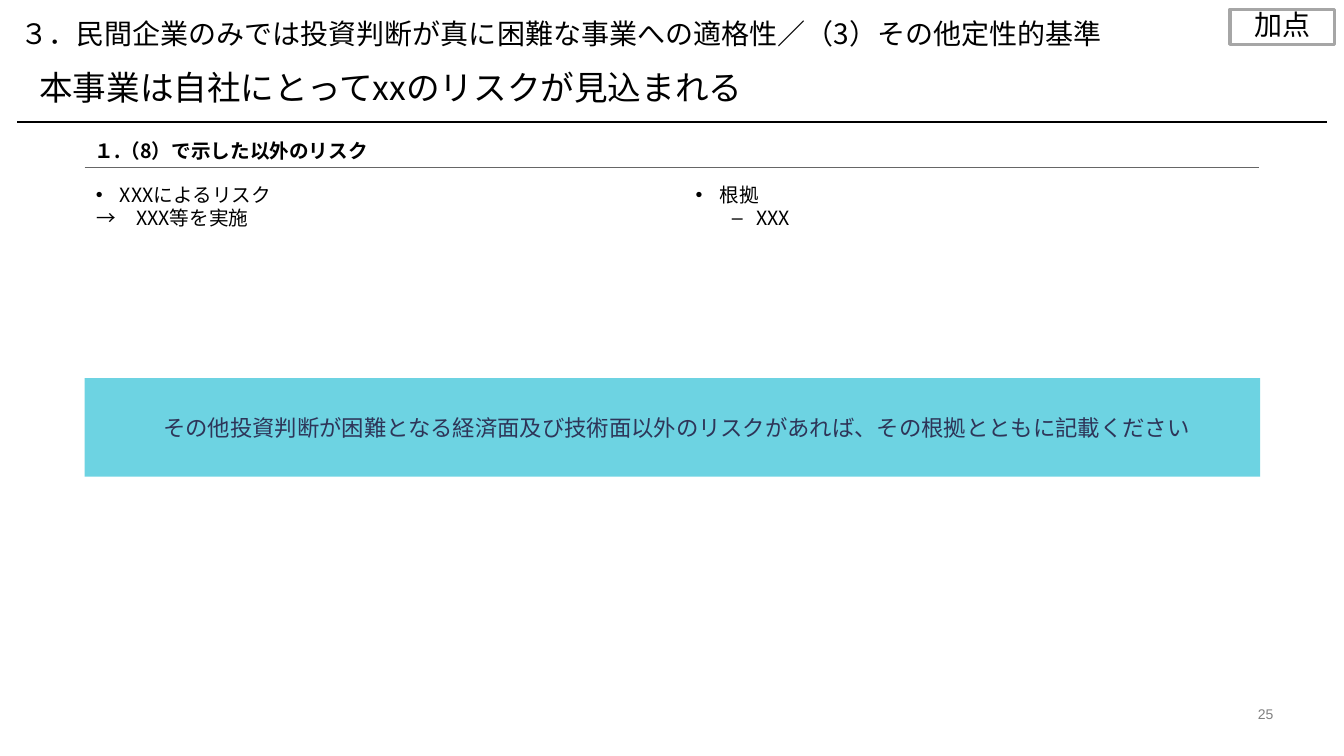
from lxml.etree import SubElement
from pptx import Presentation
from pptx.dml.color import RGBColor
from pptx.enum.shapes import MSO_CONNECTOR, MSO_SHAPE
from pptx.enum.text import MSO_ANCHOR, PP_ALIGN
from pptx.oxml.ns import qn
from pptx.util import Pt

PX = 9144
JAPANESE = "Noto Sans CJK JP"
COLORS = {
    "black": "000000",
    "white": "FFFFFF",
    "page_number": "808080",
    "tag_border": "A6A6A6",
    "heading_rule": "666666",
    "banner": "30C1D7",
    "banner_text": "2E3558",
}


def rgb(name):
    return RGBColor.from_string(COLORS[name])


def write(shape, lines, size, color="black", font=JAPANESE, align=PP_ALIGN.LEFT,
          anchor=MSO_ANCHOR.TOP, spacing=None, bold=False, inset=0):
    frame = shape.text_frame
    frame.word_wrap = True
    frame.vertical_anchor = anchor
    frame.margin_left = frame.margin_right = inset * PX
    frame.margin_top = frame.margin_bottom = inset // 2 * PX
    frame.text = "\n".join(lines)
    for para in frame.paragraphs:
        para.alignment = align
        if spacing:
            para.line_spacing = spacing
        for span in para.runs:
            span.font.size = Pt(size)
            span.font.bold = bold
            span.font.name = font
            span.font.color.rgb = rgb(color)
            SubElement(span.font._element, qn("a:ea")).set("typeface", JAPANESE)


deck = Presentation()
deck.slide_width, deck.slide_height = 1333 * PX, 750 * PX
page = deck.slides.add_slide(deck.slide_layouts[5])
shapes = page.shapes

title = shapes.title
title.left, title.top, title.width, title.height = 39 * PX, 71 * PX, 1230 * PX, 36 * PX
write(title, ["本事業は自社にとってxxのリスクが見込まれる"], 24, spacing=0.9)

section = shapes.add_textbox(20 * PX, 20 * PX, 1196 * PX, 30 * PX)
write(section, ["３．民間企業のみでは投資判断が真に困難な事業への適格性／（3）その他定性的基準"],
      20, spacing=0.9)

page_number = shapes.add_textbox(1221 * PX, 700 * PX, 42 * PX, 17 * PX)
write(page_number, ["25"], 10, "page_number", "Arial", PP_ALIGN.RIGHT, MSO_ANCHOR.BOTTOM)

tag = shapes.add_shape(MSO_SHAPE.RECTANGLE, 1220 * PX, 9 * PX, 104 * PX, 35 * PX)
tag.fill.background()
tag.line.color.rgb = rgb("tag_border")
tag.line.width = Pt(2.25)
write(tag, ["加点"], 20, align=PP_ALIGN.CENTER, anchor=MSO_ANCHOR.MIDDLE, spacing=0.9)

heading = shapes.add_shape(MSO_SHAPE.RECTANGLE, 84 * PX, 134 * PX, 1166 * PX, 31 * PX)
heading.fill.solid()
heading.fill.fore_color.rgb = rgb("white")
heading.line.fill.background()
write(heading, ["１.（8）で示した以外のリスク"], 14, anchor=MSO_ANCHOR.MIDDLE, bold=True, inset=10)

banner = shapes.add_shape(MSO_SHAPE.RECTANGLE, 84 * PX, 375 * PX, 1166 * PX, 98 * PX)
banner.fill.solid()
banner.fill.fore_color.rgb = rgb("banner")
banner_color = banner.fill._xPr.find(".//" + qn("a:srgbClr"))
SubElement(banner_color, qn("a:alpha")).set("val", "70000")
banner.line.fill.background()
write(banner, ["その他投資判断が困難となる経済面及び技術面以外のリスクがあれば、その根拠とともに記載ください"],
      16, "banner_text", "Arial", PP_ALIGN.CENTER, MSO_ANCHOR.MIDDLE, inset=10)
banner.text_frame.paragraphs[0]._p.get_or_add_pPr().set("marL", str(9 * PX))

for block in (tag, heading, banner):
    block.shadow.inherit = False

for left, right, y, color, weight in [
    (17, 1316, 121, "black", 1),
    (84, 1249, 166, "heading_rule", 0.75),
]:
    rule = shapes.add_connector(MSO_CONNECTOR.STRAIGHT, left * PX, y * PX, right * PX, y * PX)
    rule.line.color.rgb = rgb(color)
    rule.line.width = Pt(weight)
    SubElement(rule._element.spPr, qn("a:effectLst"))

columns = [
    (84, [("XXXによるリスク", 1, 35, -24, "•"), ("→　XXX等を実施", 1, 12, 0, None)]),
    (679, [("根拠", 1, 35, -24, "•"), ("XXX", 2, 71, -24, "–")]),
]
for left, items in columns:
    box = shapes.add_textbox(left * PX, 181 * PX, 571 * PX, 71 * PX)
    write(box, [item[0] for item in items], 14)
    for para, (text, level, margin, indent, bullet) in zip(box.text_frame.paragraphs, items):
        para.level = level
        properties = para._p.get_or_add_pPr()
        properties.set("marL", str(margin * PX))
        properties.set("indent", str(indent * PX))
        if bullet:
            bullet_color = SubElement(properties, qn("a:buClr"))
            SubElement(bullet_color, qn("a:srgbClr")).set("val", COLORS["black"])
            SubElement(properties, qn("a:buFont")).set("typeface", "Arial")
            SubElement(properties, qn("a:buChar")).set("char", bullet)

deck.save("out.pptx")
